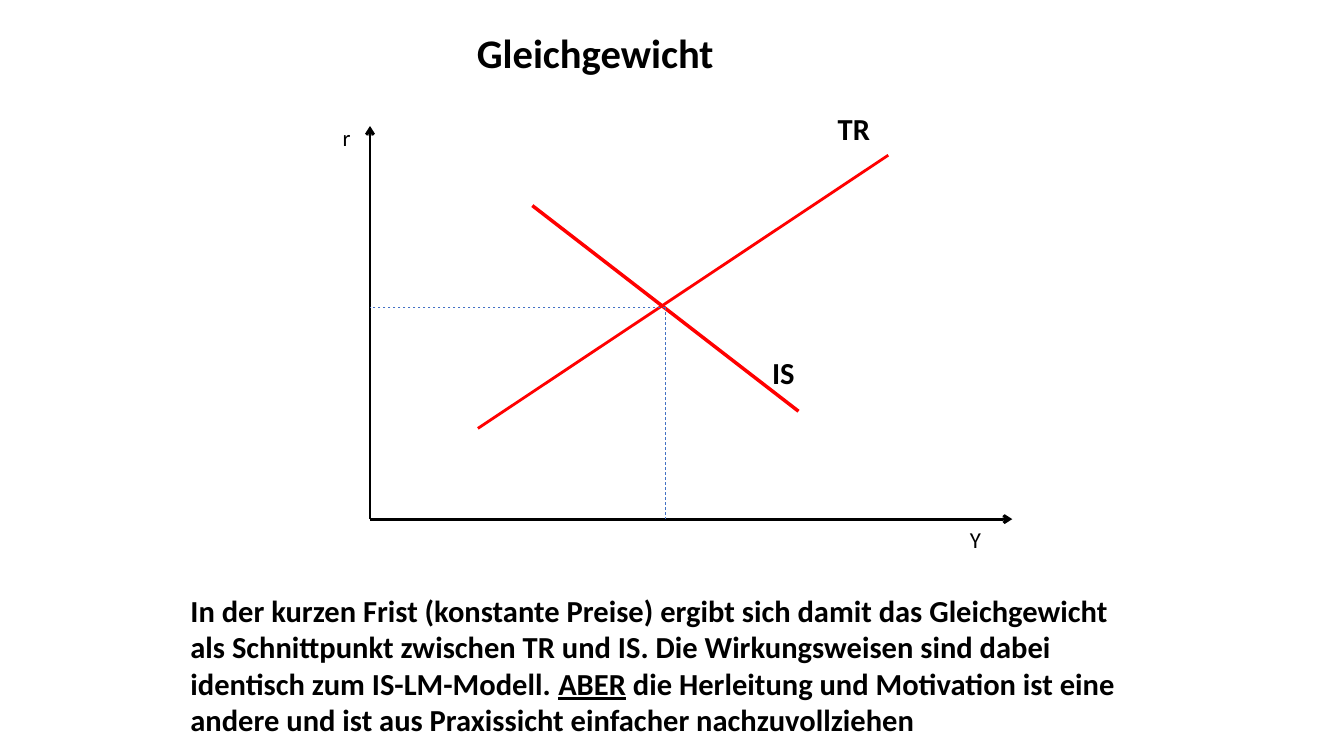
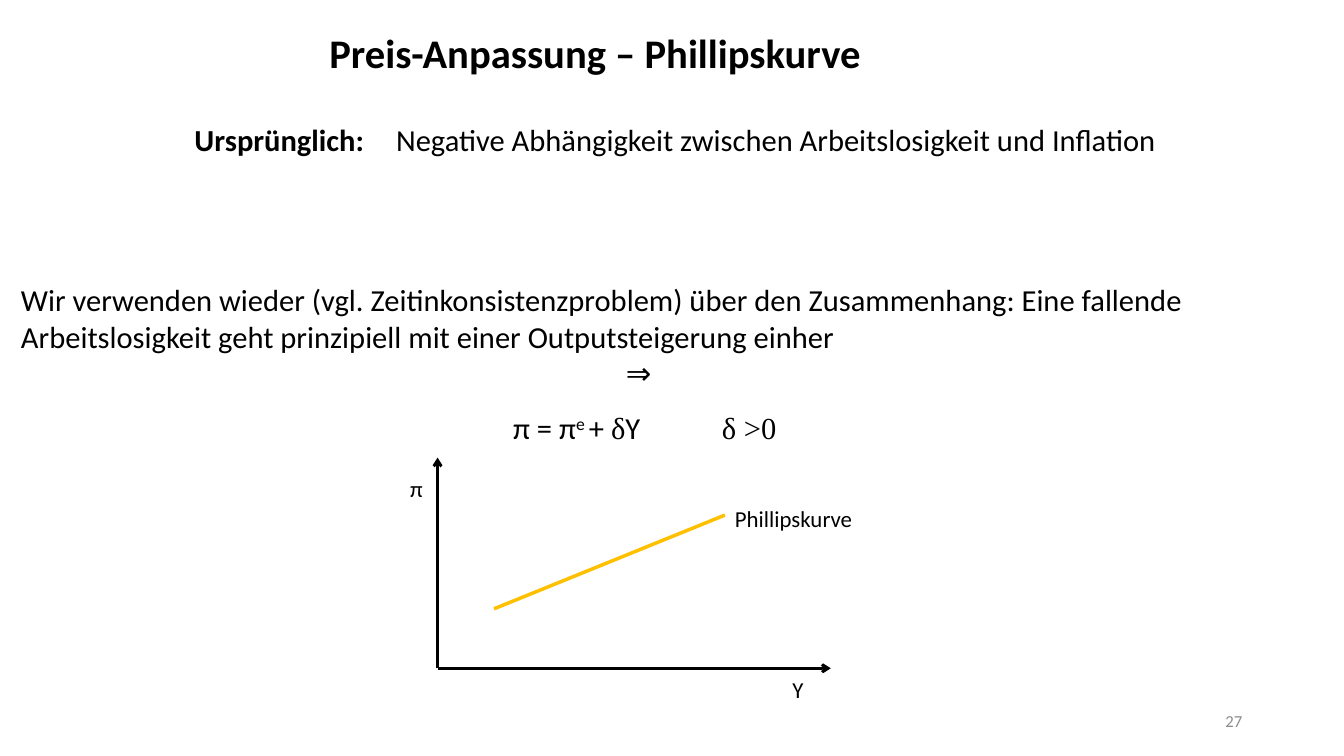
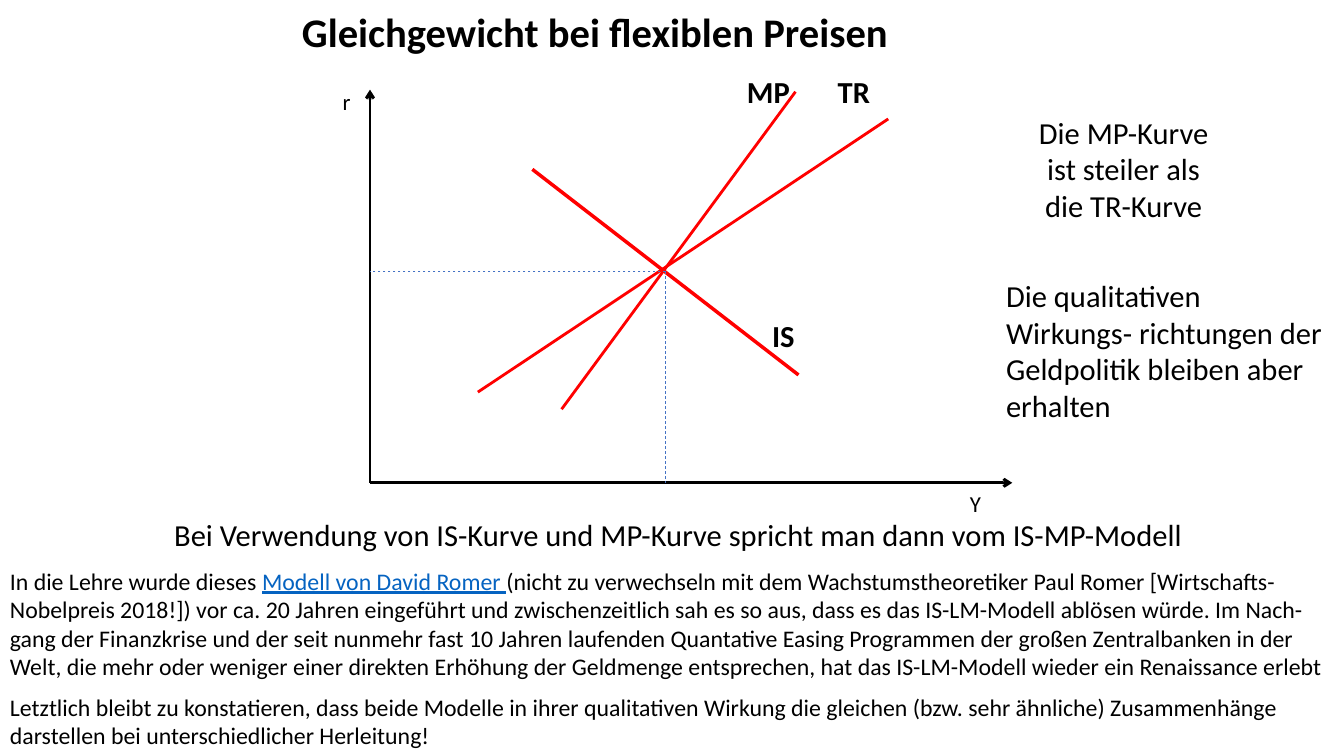
import pptx
import pptx.util
import pptx.dml.color
import pptx.enum.dml
import pptx.enum.shapes
import pptx.enum.text
import pptx.oxml.ns
from lxml import etree

RGBColor = pptx.dml.color.RGBColor
Inches = pptx.util.Inches
Align = pptx.enum.text.PP_ALIGN
Anchor = pptx.enum.text.MSO_ANCHOR
AutoSize = pptx.enum.text.MSO_AUTO_SIZE
Dash = pptx.enum.dml.MSO_LINE

BLACK = RGBColor(0x00, 0x00, 0x00)
RED = RGBColor(0xFF, 0x00, 0x00)
GOLD = RGBColor(0xFF, 0xC0, 0x00)
BLUE = RGBColor(0x44, 0x72, 0xC4)
LINK = RGBColor(0x05, 0x63, 0xC1)
GREY = RGBColor(0x8C, 0x8C, 0x8C)

SANS, SERIF = "Calibri", "Times New Roman"
TITLE, BODY, SMALL, AXIS, FOOTER = 29, 21.8, 17, 16.3, 12

TR = ((1.07, 0.90), (5.14, 3.61), RED, 2)
IS = ((1.61, 3.11), (4.25, 1.07), RED, 2.5)
MP = ((1.90, 0.73), (4.22, 3.88), RED, 2)
PHILLIPS = ((0.56, 0.59), (2.85, 1.52), GOLD, 2.5)
TR_NAME = ("TR", (4.54, 4.11), 0.52)
IS_NAME = ("IS", (3.89, 1.69), 0.43)
MP_NAME = ("MP", (3.64, 4.11), 0.63)
EQUILIBRIUM = (2.93, 2.10)
MARKET = dict(size=(6.37, 3.90), upright=("r", (-0.37, 3.97), 0.28), across=("Y", (5.85, -0.02), 0.31))

SLIDES = [
    dict(
        title="Gleichgewicht", title_area=(0.11, 0.81),
        diagram=dict(MARKET, origin=(3.67, 5.15), curves=[TR, IS], names=[IS_NAME, TR_NAME],
                     crossing=EQUILIBRIUM),
        texts=[
            dict(area=(1.79, 5.82, 9.61, 1.57), bold=True, paras=[[
                ("In der kurzen Frist (konstante Preise) ergibt sich damit das Gleichgewicht als "
                 "Schnittpunkt zwischen TR und IS. Die Wirkungsweisen sind dabei identisch zum "
                 "IS-LM-Modell. ", {}),
                ("ABER", dict(underline=True)),
                (" die Herleitung und Motivation ist eine andere und ist aus Praxissicht einfacher "
                 "nachzuvollziehen", {})]]),
        ]),
    dict(
        title="Preis-Anpassung – Phillipskurve", title_area=(0.11, 0.81),
        diagram=dict(origin=(4.34, 6.63), size=(3.90, 2.09), upright=("π", (-0.37, 1.97), 0.33),
                     across=("Y", (3.42, -0.02), 0.31), curves=[PHILLIPS]),
        texts=[
            dict(area=(9.42, 6.95, 3, 0.4), size=FOOTER, color=GREY, align=Align.RIGHT,
                 anchor=Anchor.MIDDLE, paras=["27"]),
            dict(area=(1.84, 4.01, 9.11, 0.47), align=Align.CENTER, paras=[[
                ("π = π", {}), ("e ", dict(raised=True)), ("+ ", {}), ("δ", dict(name=SERIF)),
                ("Y\t ", {}), ("δ >0", dict(name=SERIF))]]),
            dict(area=(1.83, 1.15, 10.59, 0.47), paras=[[
                ("Ursprünglich:\t", dict(bold=True)),
                ("Negative Abhängigkeit zwischen Arbeitslosigkeit und Inflation", {})]]),
            dict(area=(0.11, 2.74, 12.45, 1.2), last_align=Align.CENTER, paras=[
                "Wir verwenden wieder (vgl. Zeitinkonsistenzproblem) über den Zusammenhang: Eine "
                "fallende Arbeitslosigkeit geht prinzipiell mit einer Outputsteigerung einher", "⇒"]),
            dict(area=(7.19, 4.96, 1.38, 0.38), size=AXIS, wrap=False, paras=["Phillipskurve"]),
        ]),
    dict(
        title="Gleichgewicht bei flexiblen Preisen", title_area=(0.06, 0.51),
        diagram=dict(MARKET, origin=(3.67, 4.79), curves=[TR, IS, MP],
                     names=[IS_NAME, TR_NAME, MP_NAME], crossing=EQUILIBRIUM),
        texts=[
            dict(area=(9.88, 1.08, 2.53, 1.2), align=Align.CENTER,
                 paras=["Die MP-Kurve", "ist steiler als", "die TR-Kurve"]),
            dict(area=(9.88, 2.7, 3.45, 1.2), paras=[
                "Die qualitativen Wirkungs- richtungen der Geldpolitik bleiben aber erhalten"]),
            dict(area=(1.63, 5.07, 11.04, 0.47), paras=[
                "Bei Verwendung von IS-Kurve und MP-Kurve spricht man dann vom IS-MP-Modell"]),
            dict(area=(0, 5.57, 13.33, 1.25), size=SMALL, paras=[[
                ("In die Lehre wurde dieses ", {}),
                ("Modell von David Romer ", dict(color=LINK, underline=True)),
                ("(nicht zu verwechseln mit dem Wachstumstheoretiker Paul Romer [Wirtschafts- "
                 "Nobelpreis 2018!]) vor ca. 20 Jahren eingeführt und zwischenzeitlich sah es so aus, "
                 "dass es das IS-LM-Modell ablösen würde. Im Nach- gang der Finanzkrise und der seit "
                 "nunmehr fast 10 Jahren laufenden Quantative Easing Programmen der großen "
                 "Zentralbanken in der Welt, die mehr oder weniger einer direkten Erhöhung der "
                 "Geldmenge entsprechen, hat das IS-LM-Modell wieder ein Renaissance erlebt", {})]]),
            dict(area=(0, 6.82, 13.33, 0.67), size=SMALL, paras=[
                "Letztlich bleibt zu konstatieren, dass beide Modelle in ihrer qualitativen Wirkung "
                "die gleichen (bzw. sehr ähnliche) Zusammenhänge darstellen bei unterschiedlicher "
                "Herleitung!"]),
        ]),
]


def style_font(font, size=None, color=None, bold=None, name=None, underline=None):
    if size:
        font.size = pptx.util.Pt(size)
    if color is not None:
        font.color.rgb = color
    if name:
        font.name = name
    if bold is not None:
        font.bold = bold
    if underline is not None:
        font.underline = underline


def add_text(page, area, paras, size=BODY, color=BLACK, bold=False, align=Align.LEFT,
             last_align=None, anchor=Anchor.TOP, wrap=True):
    box = page.shapes.add_textbox(*map(Inches, area))
    frame = box.text_frame
    frame.word_wrap = wrap
    frame.auto_size = AutoSize.NONE if anchor == Anchor.MIDDLE else AutoSize.SHAPE_TO_FIT_TEXT
    frame.vertical_anchor = anchor
    for index, content in enumerate(paras):
        para = frame.paragraphs[0] if index == 0 else frame.add_paragraph()
        para.alignment = align
        para._p.get_or_add_pPr().set("defTabSz", str(Inches(1)))
        style_font(para.font, size, color, bold, SANS)
        for text, style in [(content, {})] if isinstance(content, str) else content:
            span = para.add_run()
            span.text = text
            style = dict(style)
            if style.pop("raised", False):
                span.font._element.set("baseline", "30000")
            style_font(span.font, **style)
    if last_align is not None:
        para.alignment = last_align


def add_line(page, start, end, color, width, dashed=False, arrow=False):
    line = page.shapes.add_connector(pptx.enum.shapes.MSO_CONNECTOR.STRAIGHT,
                                     *map(Inches, (*start, *end)))
    line.line.color.rgb = color
    line.line.width = pptx.util.Pt(width)
    if dashed:
        line.line.dash_style = Dash.DASH
    if arrow:
        etree.SubElement(line.line._get_or_add_ln(), pptx.oxml.ns.qn("a:tailEnd"), type="arrow")
    etree.SubElement(line._element.spPr, pptx.oxml.ns.qn("a:effectLst"))


def add_diagram(page, origin, size, upright, across, curves, names=(), crossing=None):
    def place(point):
        return origin[0] + point[0], origin[1] - point[1]

    for tip in ((0, size[1]), (size[0], 0)):
        add_line(page, origin, place(tip), BLACK, 2, arrow=True)
    for label, corner, width in (upright, across):
        add_text(page, (*place(corner), width, 0.38), [label], AXIS, wrap=False)
    for start, end, color, width in curves:
        add_line(page, place(start), place(end), color, width)
    for label, corner, width in names:
        add_text(page, (*place(corner), width, 0.47), [label], bold=True, wrap=False)
    if crossing:
        for foot in ((0, crossing[1]), (crossing[0], 0)):
            add_line(page, place(crossing), place(foot), BLUE, 0.5, dashed=True)


def add_title(page, text, top, height):
    title = page.shapes.title
    title.left, title.top, title.width, title.height = map(Inches, (1.75, top, 8.31, height))
    frame = title.text_frame
    frame.margin_left = frame.margin_right = Inches(0.09)
    frame.margin_top = frame.margin_bottom = Inches(0.04)
    frame.auto_size = AutoSize.NONE
    frame.vertical_anchor = Anchor.MIDDLE
    frame.text = text
    para = frame.paragraphs[0]
    para.alignment = Align.CENTER
    style_font(para.font, TITLE, BLACK, True, SANS)


def main():
    deck = pptx.Presentation()
    deck.slide_width, deck.slide_height = Inches(13.33), Inches(7.5)
    for content in SLIDES:
        page = deck.slides.add_slide(deck.slide_layouts[5])
        add_title(page, content["title"], *content["title_area"])
        add_diagram(page, **content["diagram"])
        for text in content["texts"]:
            add_text(page, **text)
    deck.save("out.pptx")


if __name__ == "__main__":
    main()
